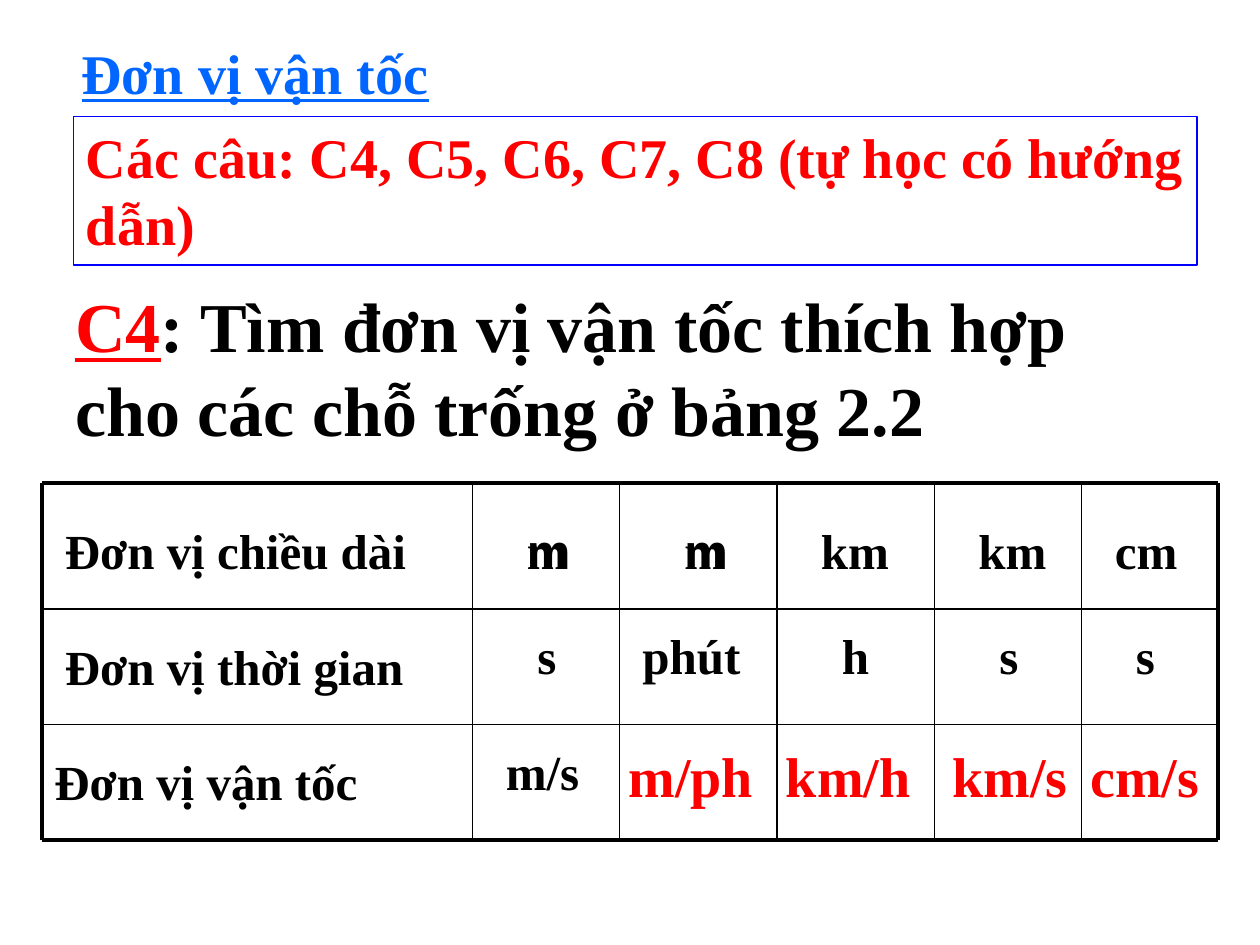
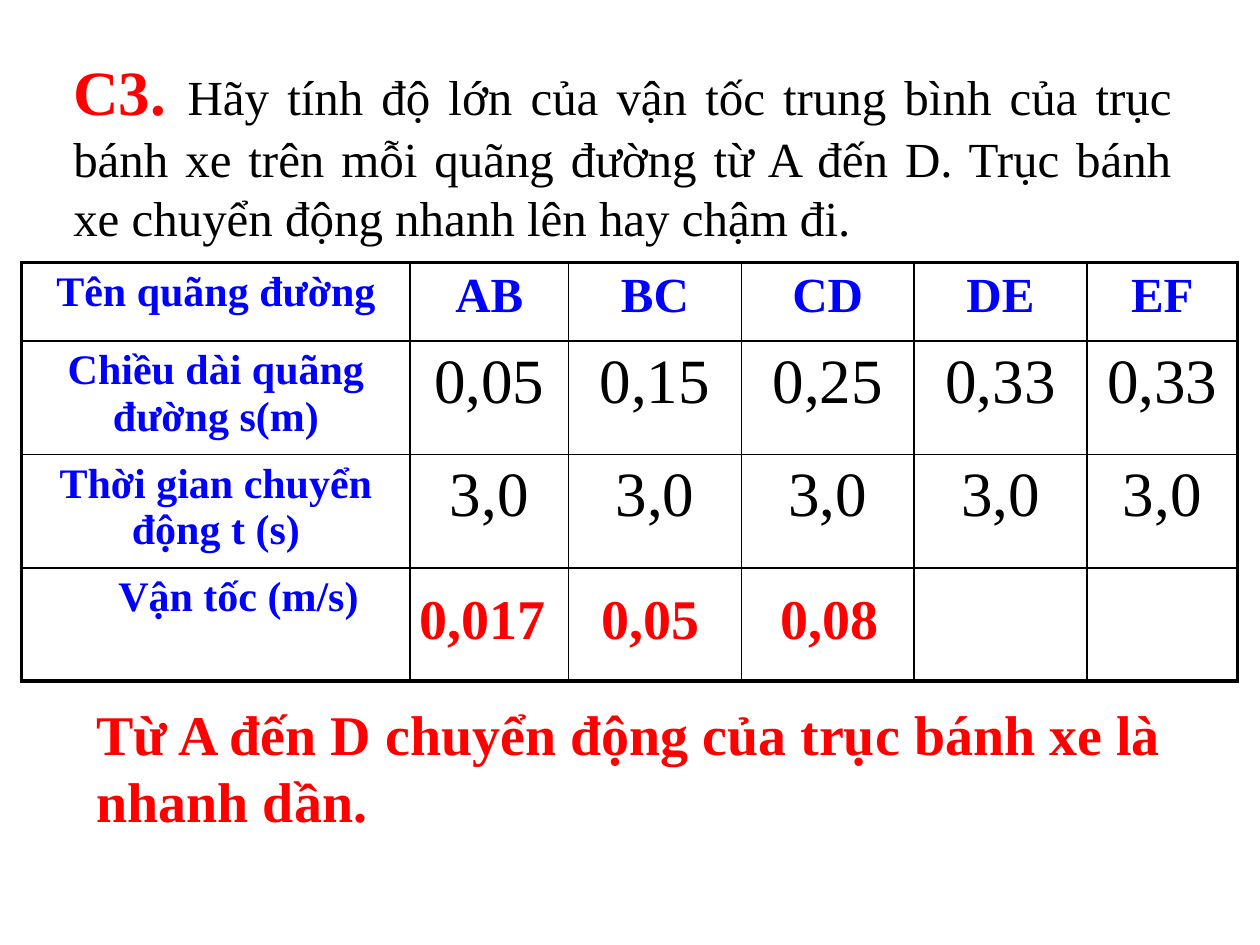
from lxml.etree import SubElement
from pptx import Presentation
from pptx.dml.color import RGBColor
from pptx.enum.shapes import MSO_CONNECTOR, MSO_SHAPE
from pptx.enum.text import MSO_ANCHOR, MSO_AUTO_SIZE, PP_ALIGN
from pptx.oxml.ns import qn
from pptx.util import Pt

BLACK, RED, BLUE = "000000", "FF0000", "0000FF"
ANSWER_RED, HEADING_BLUE = "FC0000", "0066FF"


def rgb(hex_color):
    return RGBColor.from_string(hex_color)


def write(paragraph, text, size=28, color=BLACK, bold=True, underline=False,
          align=PP_ALIGN.LEFT, font="Times New Roman"):
    paragraph.alignment = align
    run = paragraph.add_run()
    run.text = text
    run.font.name = font
    run.font.size = Pt(size)
    run.font.bold = bold
    run.font.underline = underline
    run.font.color.rgb = rgb(color)


class Lesson:
    """Hold the lesson's style and current slide, and draw its elements."""

    thick, thin = 2.25, 1

    def __init__(self):
        self.deck = Presentation()
        self.deck.slide_width, self.deck.slide_height = Pt(720), Pt(540)
        self.slide = None

    def new_slide(self):
        self.slide = self.deck.slides.add_slide(self.deck.slide_layouts[6])

    def fill_frame(self, frame, parts, wrap, **style):
        frame.word_wrap = wrap
        frame.auto_size = MSO_AUTO_SIZE.SHAPE_TO_FIT_TEXT
        frame.vertical_anchor = MSO_ANCHOR.TOP
        for text, part_style in parts:
            write(frame.paragraphs[0], text, **{**style, **part_style})

    def text(self, place, *parts, wrap=True, **style):
        box = self.slide.shapes.add_textbox(*map(Pt, place))
        self.fill_frame(box.text_frame, parts, wrap, **style)

    def framed_text(self, place, *parts, **style):
        panel = self.slide.shapes.add_shape(MSO_SHAPE.RECTANGLE, *map(Pt, place))
        panel.shadow.inherit = False
        panel.fill.background()
        panel.line.color.rgb = rgb(BLUE)
        panel.line.width = Pt(0.75)
        self.fill_frame(panel.text_frame, parts, True, **style)

    def rule(self, start, end, width):
        rule = self.slide.shapes.add_connector(
            MSO_CONNECTOR.STRAIGHT, *map(Pt, start + end))
        rule.line.color.rgb = rgb(BLACK)
        rule.line.width = Pt(width)
        SubElement(rule._element.spPr, qn("a:effectLst"))

    def grid(self, xs, ys):
        for y in ys:
            outer = y in (ys[0], ys[-1])
            self.rule((xs[0], y), (xs[-1], y), self.thick if outer else self.thin)
        for x in xs:
            outer = x in (xs[0], xs[-1])
            self.rule((x, ys[0]), (x, ys[-1]), self.thick if outer else self.thin)

    def border(self, cell, side, width):
        properties = cell._tc.get_or_add_tcPr()
        line = SubElement(properties, qn(f"a:ln{side}"), w=str(Pt(width)))
        solid = SubElement(line, qn("a:solidFill"))
        SubElement(solid, qn("a:srgbClr"), val=BLACK)

    def table(self, left, top, widths, heights):
        frame = self.slide.shapes.add_table(
            len(heights), len(widths), Pt(left), Pt(top),
            Pt(sum(widths)), Pt(sum(heights)))
        table = frame.table
        table.first_row = table.horz_banding = False
        for column, width in zip(table.columns, widths):
            column.width = Pt(width)
        for row, height in zip(table.rows, heights):
            row.height = Pt(height)
        last_row, last_column = len(heights) - 1, len(widths) - 1
        for r, row in enumerate(table.rows):
            for c, cell in enumerate(row.cells):
                outer_sides = {"L": c == 0, "R": c == last_column,
                               "T": r == 0, "B": r == last_row}
                for side, outer in outer_sides.items():
                    self.border(cell, side, self.thick if outer else self.thin)
                cell.fill.background()
        return table

    def cell(self, cell, text, left=7.2, **style):
        cell.margin_left = Pt(left)
        write(cell.text_frame.paragraphs[0], text, **style)


def build_units(lesson):
    lesson.new_slide()
    lesson.text((36, 158, 648, 104.5),
                ("C4", {"color": RED, "underline": True}),
                (": Tìm đơn vị vận tốc thích hợp cho các chỗ trống ở bảng 2.2", {}),
                size=40)

    speed_answers = [("m/ph", 352, 174), ("km/h", 442, 174),
                     ("km/s", 537.3, 162.7), ("cm/s", 616, 104)]
    for answer, left, width in speed_answers:
        lesson.text((left, 420, width, 46), (answer, {}), size=32, color=ANSWER_RED)

    lesson.grid((24, 270, 354, 444, 534, 618, 696), (276, 348, 414, 480))
    labels = [("Đơn vị chiều dài", 30, 294, 234),
              ("Đơn vị thời gian", 30, 360, 234),
              ("Đơn vị vận tốc", 24, 426, 246)]
    for label, left, top, width in labels:
        lesson.text((left, top, width, 41), (label, {}))

    units = {
        294: [("m", 294, 42), ("m", 384, 42), ("km", 462, 60),
              ("km", 552, 60), ("cm", 630, 66)],
        354: [("s", 300, 30), ("phút", 360, 78), ("h", 474, 48),
              ("s", 564, 42), ("s", 642, 36)],
        420: [("m/s", 282, 66)],
    }
    for top, row in units.items():
        for unit, left, width in row:
            fonts = ("Arial", "Times New Roman") if unit == "m" else ("Times New Roman",)
            for font in fonts:
                lesson.text((left, top, width, 41), (unit, {}), font=font)

    lesson.framed_text((42, 66.5, 642, 85),
                       ("Các câu: C4, C5, C6, C7, C8 (tự học có hướng dẫn)", {}),
                       size=32, color=RED)
    lesson.text((39.5, 18.5, 214.5, 46), ("Đơn vị vận tốc", {}), wrap=False,
                size=32, color=HEADING_BLUE, underline=True)


def build_average_speed(lesson):
    lesson.new_slide()
    lesson.text((34.8, 26.6, 642, 119),
                ("C3. ", {"size": 36, "color": RED, "bold": True}),
                ("Hãy tính độ lớn của vận tốc trung bình của trục bánh xe trên mỗi "
                 "quãng đường từ A đến D. Trục bánh xe chuyển động nhanh lên hay "
                 "chậm đi.", {}),
                bold=False, align=PP_ALIGN.JUSTIFY)
    lesson.text((48, 396, 636, 85),
                ("Từ A đến D chuyển động của trục bánh xe là nhanh dần.", {}),
                size=32, color=RED)

    sections = lesson.table(12.4, 150, (222, 90.5, 98.75, 98.75, 98.75, 86.25),
                            (44.8, 64.8, 64.8, 64.8))
    rows = [
        ("Tên quãng đường", "AB", "BC", "CD", "DE", "EF"),
        ("Chiều dài quãng đường s(m)", "0,05", "0,15", "0,25", "0,33", "0,33"),
        ("Thời gian chuyển động t (s)",) + ("3,0",) * 5,
    ]
    label = {"size": 24, "color": BLUE}
    name = {"size": 28, "color": BLUE}
    value = {"size": 36, "bold": False}
    for r, row in enumerate(rows):
        for c, text in enumerate(row):
            style = label if c == 0 else name if r == 0 else value
            lesson.cell(sections.cell(r, c), text, align=PP_ALIGN.CENTER, **style)
    lesson.cell(sections.cell(3, 0), "Vận tốc (m/s)", left=55.2, **label)

    for answer, left in (("0,017", 228), ("0,05", 324), ("0,08", 426)):
        lesson.text((left, 330, 96, 46), (answer, {}), size=32, color=RED,
                    align=PP_ALIGN.CENTER)


def main():
    lesson = Lesson()
    build_units(lesson)
    build_average_speed(lesson)
    lesson.deck.save("out.pptx")


if __name__ == "__main__":
    main()
